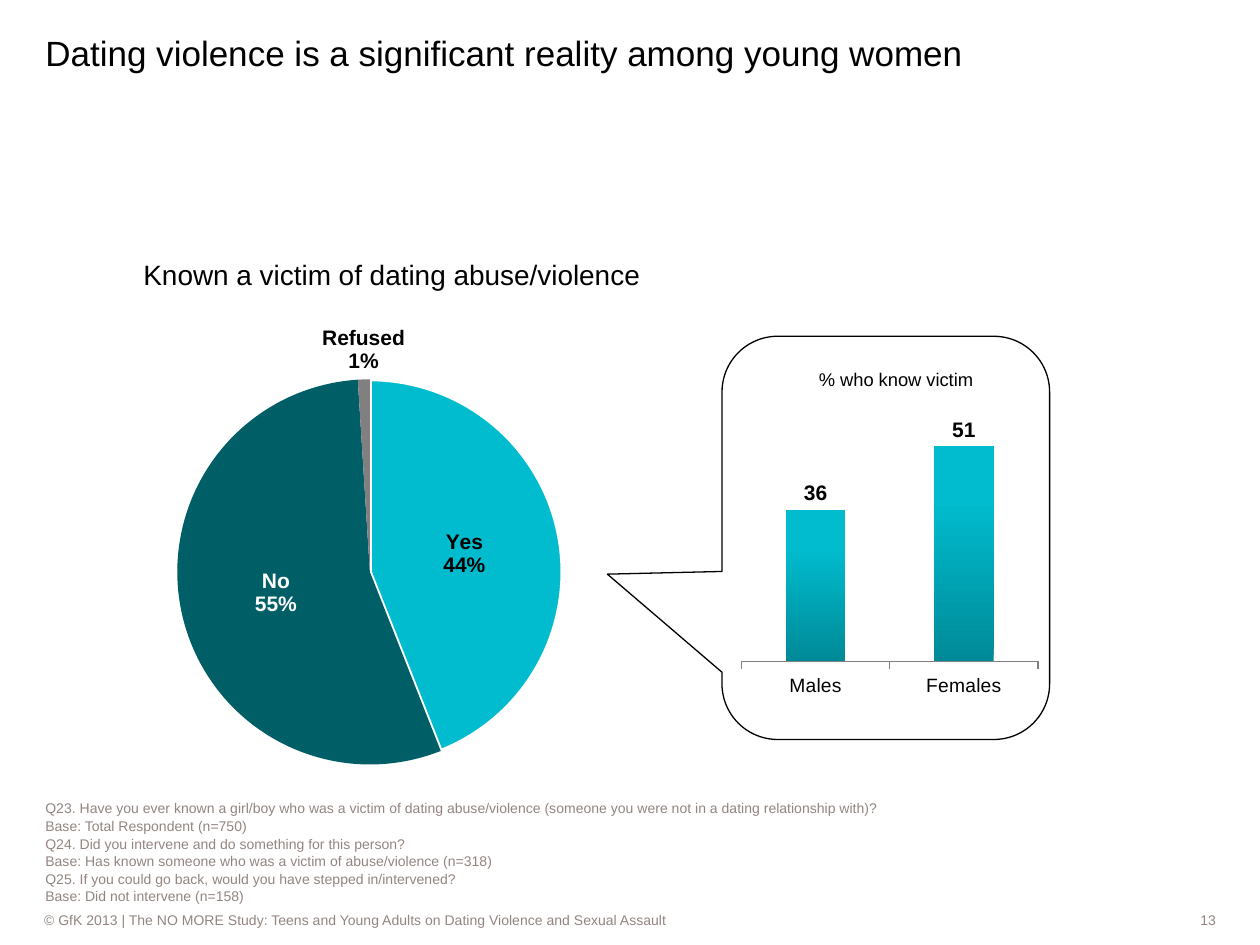
import pptx
import pptx.chart.data
import pptx.dml.color
import pptx.enum.chart
import pptx.enum.shapes
import pptx.enum.text
import pptx.oxml
import pptx.oxml.ns
import pptx.util

Pt = pptx.util.Pt
ALIGN = pptx.enum.text.PP_ALIGN
ANCHOR = pptx.enum.text.MSO_ANCHOR
CHART = pptx.enum.chart.XL_CHART_TYPE
LABEL = pptx.enum.chart.XL_LABEL_POSITION
TICK = pptx.enum.chart.XL_TICK_MARK
qn = pptx.oxml.ns.qn

COLORS = {
    "black": "000000",
    "white": "FFFFFF",
    "note": "928580",
    "turquoise": "00BCCE",
    "turquoise_shade": "008A98",
    "teal": "005E67",
    "gray": "808080",
}


def color(name):
    return pptx.dml.color.RGBColor.from_string(COLORS[name])


def apply(target, values):
    for name, value in values.items():
        setattr(target, name, value)


def chart_element(tag, attributes="", text=""):
    namespace = pptx.oxml.ns.nsdecls("c")
    return pptx.oxml.parse_xml(f"<c:{tag} {namespace} {attributes}>{text}</c:{tag}>")


class SlideBuilder:
    font_name = "Arial"

    def __init__(self, presentation):
        self.slide = presentation.slides.add_slide(presentation.slide_layouts[6])

    def style_font(self, font, size, ink="black", bold=False):
        apply(font, {"name": self.font_name, "size": Pt(size), "bold": bold})
        font.color.rgb = color(ink)

    def text(self, box, lines, size, ink="black", anchor=ANCHOR.MIDDLE,
             fill=None, bottom=0, **paragraph_format):
        shape = self.slide.shapes.add_textbox(*map(Pt, box))
        if fill:
            shape.fill.solid()
            shape.fill.fore_color.rgb = color(fill)
        frame = shape.text_frame
        apply(frame, {
            "word_wrap": True, "vertical_anchor": anchor,
            "margin_left": 0, "margin_right": 0,
            "margin_top": 0, "margin_bottom": Pt(bottom),
        })
        frame.text = "\n".join(lines)
        for paragraph in frame.paragraphs:
            apply(paragraph, paragraph_format)
            self.style_font(paragraph.font, size, ink)

    def chart(self, kind, box, categories, values, plot_area, number_format):
        data = pptx.chart.data.CategoryChartData(number_format=number_format)
        data.categories = categories
        data.add_series("Series 1", values)
        chart = self.slide.shapes.add_chart(kind, *map(Pt, box), data).chart
        apply(chart, {"has_legend": False, "has_title": False})
        self.style_font(chart.font, 18)
        # Fixed inner plot area, as fractions of the chart
        parts = '<c:layoutTarget val="inner"/><c:xMode val="edge"/><c:yMode val="edge"/>'
        parts += "".join(f'<c:{tag} val="{value}"/>' for tag, value in zip("xywh", plot_area))
        area = chart._chartSpace.chart.plotArea
        for layout in area.findall(qn("c:layout")):
            area.remove(layout)
        area.insert(0, chart_element("layout", text=f"<c:manualLayout>{parts}</c:manualLayout>"))
        return chart

    def pie(self, box, slices, plot_area):
        names, values, fills, inks, positions = zip(*slices)
        chart = self.chart(CHART.PIE, box, names, values, plot_area, "0%")
        plot = chart.plots[0]
        plot.vary_by_categories = True
        series = plot.series[0]
        for index, fill in enumerate(fills):
            point = series.points[index]
            point.format.fill.solid()
            point.format.fill.fore_color.rgb = color(fill)
            point.format.line.fill.background()
            self.style_font(point.data_label.font, 12, inks[index], bold=True)
            point.data_label.position = positions[index]
        # White edge around the first slice
        edge = series.points[0].format.line
        edge.color.rgb = color("white")
        edge.width = Pt(2.25)
        # Category over percentage in every label
        for label in series._element.iter(qn("c:dLbl")):
            label.find(qn("c:idx")).addnext(
                chart_element("numFmt", 'formatCode="0%" sourceLinked="0"'))
            label.find(qn("c:showCatName")).set("val", "1")
            label.append(chart_element("separator", text="\n"))

    def columns(self, box, categories, values, plot_area):
        chart = self.chart(CHART.COLUMN_CLUSTERED, box, categories, values, plot_area, "0")
        plot = chart.plots[0]
        apply(plot, {"gap_width": 150, "vary_by_categories": False, "has_data_labels": True})
        apply(plot.data_labels, {"show_value": True, "position": LABEL.OUTSIDE_END})
        self.style_font(plot.data_labels.font, 12, bold=True)
        # Shade rising from the foot of each column
        fill = plot.series[0].format.fill
        fill.gradient()
        fill.gradient_angle = 90
        for stop, name, position in zip(
                fill.gradient_stops, ("turquoise_shade", "turquoise"), (0, 0.75)):
            stop.color.rgb = color(name)
            stop.position = position
        apply(chart.value_axis, {
            "minimum_scale": 0, "maximum_scale": 100,
            "has_major_gridlines": False, "visible": False,
        })
        axis = chart.category_axis
        apply(axis, {"major_tick_mark": TICK.OUTSIDE, "has_major_gridlines": False})
        axis.format.line.color.rgb = color("gray")
        axis.format.line.width = Pt(0.75)
        self.style_font(axis.tick_labels.font, 11)

    def callout(self, box, adjustments):
        kind = pptx.enum.shapes.MSO_SHAPE.ROUNDED_RECTANGULAR_CALLOUT
        shape = self.slide.shapes.add_shape(kind, *map(Pt, box))
        shape.shadow.inherit = False
        shape.fill.background()
        shape.line.color.rgb = color("black")
        shape.line.width = Pt(0.75)
        for index, value in enumerate(adjustments):
            shape.adjustments[index] = value


def main():
    presentation = pptx.Presentation()
    apply(presentation, {"slide_width": Pt(720), "slide_height": Pt(540)})
    builder = SlideBuilder(presentation)

    # Footer
    builder.text((25.2, 519.8, 555.8, 11.5), [
        "© GfK 2013 | The NO MORE Study: Teens and Young Adults on Dating Violence "
        "and Sexual Assault"], 8, "note", fill="white")
    builder.text((592.6, 519.8, 102.2, 11.5), ["13"], 8, "note", fill="white",
                 alignment=ALIGN.RIGHT)

    # Survey questions
    builder.text((25.9, 458.6, 668.9, 61.2), [
        "Q23. Have you ever known a girl/boy who was a victim of dating abuse/violence "
        "(someone you were not in a dating relationship with)?",
        "Base: Total Respondent (n=750)",
        "Q24. Did you intervene and do something for this person?",
        "Base: Has known someone who was a victim of abuse/violence (n=318)",
        "Q25. If you could go back, would you have stepped in/intervened?",
        "Base: Did not intervene (n=158)",
    ], 8, "note", ANCHOR.BOTTOM, bottom=2.9, line_spacing=1.05)

    # Title
    builder.text((25.9, 18, 612, 23.8),
                 ["Dating violence is a significant reality among young women"],
                 20, anchor=ANCHOR.BOTTOM)

    # Pie of all respondents
    builder.pie((70.6, 138.2, 493.9, 393.1), [
        ("Yes", 0.44, "turquoise", "black", LABEL.CENTER),
        ("No", 0.55, "teal", "white", LABEL.CENTER),
        ("Refused", 0.01, "gray", "black", LABEL.OUTSIDE_END),
    ], (0.01, 0.2, 0.55, 0.56))
    builder.text((75.6, 144, 296.6, 25.2), ["Known a victim of dating abuse/violence"],
                 16, alignment=ALIGN.CENTER)

    # Callout with the split by sex
    builder.columns((412.6, 125.3, 184.3, 293.8), ["Males", "Females"], [36, 51],
                    (0.06, 0.04, 0.92, 0.82))
    builder.text((468, 210.2, 108, 12.2), ["% who know victim"], 10.5, anchor=ANCHOR.TOP)
    builder.callout((412.6, 192.2, 187.2, 230.4), (-0.85, 0.09, 0.17))

    presentation.save("out.pptx")


if __name__ == "__main__":
    main()
